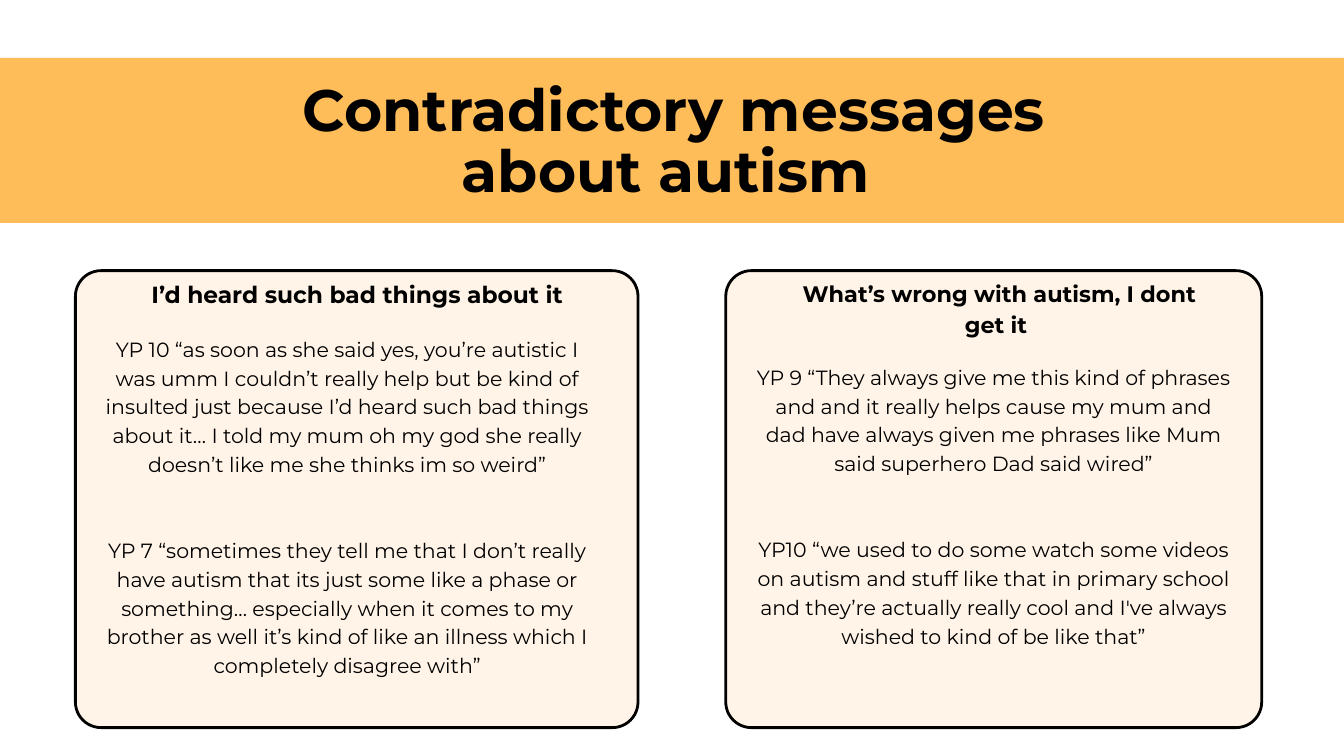
from pptx import Presentation
from pptx.dml.color import RGBColor
from pptx.enum.shapes import MSO_SHAPE
from pptx.enum.text import PP_ALIGN
from pptx.util import Pt

RECTANGLE = MSO_SHAPE.RECTANGLE
ROUNDED = MSO_SHAPE.ROUNDED_RECTANGLE
CENTER = PP_ALIGN.CENTER

ORANGE = RGBColor(0xFF, 0xBD, 0x59)
CREAM = RGBColor(0xFF, 0xF4, 0xE7)
BLACK = RGBColor(0, 0, 0)
FONT = "Montserrat"

SLIDE_W, SLIDE_H = 1440, 810
CARD_TOP, CARD_H, CORNER = 290, 489.6, 27.5
HEADING_TOP = 295.2
QUOTE_SIZE, QUOTE_LEADING = 22, 30.8
QUOTE_GAP = 2 * QUOTE_LEADING
QUOTES_BOTTOM = 754.5

# The space that ends the title and headings counts when a line is centred.
TITLE = "Contradictory messages about autism "

# Spans are (left, width).
CARDS = [
    {
        "card": (80.8, 602.8),
        "heading": "I’d heard such bad things about it ",
        "heading_span": (159.1, 447.1),
        "heading_size": 25,
        "heading_lines": 1,
        "quotes": [
            "YP 10 “as soon as she said yes, you’re autistic I was umm I couldn’t "
            "really help but be kind of insulted just because I’d heard such bad "
            "things about it… I told my mum oh my god she really doesn’t like me "
            "she thinks im so weird”",
            "YP 7 “sometimes they tell me that I don’t really have autism that its "
            "just some like a phase or something… especially when it comes to my "
            "brother as well it’s kind of like an illness which I completely "
            "disagree with”",
        ],
        "quotes_span": (105.1, 533.5),
        "quotes_top": 356.4,
    },
    {
        "card": (777.6, 574.2),
        "heading": "What’s wrong with autism, I dont get it ",
        "heading_span": (857.5, 426.2),
        "heading_size": 24,
        "heading_lines": 2,
        "quotes": [
            "YP 9 “They always give me this kind of phrases and and it really helps "
            "cause my mum and dad have always given me phrases like Mum said "
            "superhero Dad said wired”",
            "YP10 “we used to do some watch some videos on autism and stuff like "
            "that in primary school and they’re actually really cool and I've "
            "always wished to kind of be like that”",
        ],
        "quotes_span": (807.8, 513.4),
        "quotes_top": 386.6,
    },
]


def add_panel(slide, preset, left, top, width, height, fill, outline=None):
    panel = slide.shapes.add_shape(preset, Pt(left), Pt(top), Pt(width), Pt(height))
    panel.shadow.inherit = False
    panel.fill.solid()
    panel.fill.fore_color.rgb = fill
    if outline is None:
        panel.line.fill.background()
    else:
        panel.line.color.rgb = outline
        panel.line.width = Pt(3)
    return panel


def add_text(slide, paragraphs, left, top, width, height, *,
             size, leading, bold=False, gap=0):
    """Centred text; gap is the space between paragraphs."""
    box = slide.shapes.add_textbox(Pt(left), Pt(top), Pt(width), Pt(height))
    frame = box.text_frame
    frame.word_wrap = True
    frame.margin_left = frame.margin_right = 0
    frame.margin_top = frame.margin_bottom = 0
    for index, text in enumerate(paragraphs):
        paragraph = frame.add_paragraph() if index else frame.paragraphs[0]
        paragraph.alignment = CENTER
        paragraph.line_spacing = Pt(leading)
        paragraph.space_before = Pt(gap if index else 0)
        run = paragraph.add_run()
        run.text = text
        run.font.name = FONT
        run.font.size = Pt(size)
        run.font.bold = bold
        run.font.color.rgb = BLACK


def add_card(slide, content):
    left, width = content["card"]
    card = add_panel(slide, ROUNDED, left, CARD_TOP, width, CARD_H, CREAM, BLACK)
    card.adjustments[0] = CORNER / min(width, CARD_H)

    left, width = content["heading_span"]
    size = content["heading_size"]
    leading = size * 1.4
    add_text(slide, [content["heading"]], left, HEADING_TOP, width,
             leading * content["heading_lines"], size=size, leading=leading, bold=True)

    left, width = content["quotes_span"]
    top = content["quotes_top"]
    add_text(slide, content["quotes"], left, top, width, QUOTES_BOTTOM - top,
             size=QUOTE_SIZE, leading=QUOTE_LEADING, gap=QUOTE_GAP)


def main():
    deck = Presentation()
    deck.slide_width, deck.slide_height = Pt(SLIDE_W), Pt(SLIDE_H)
    slide = deck.slides.add_slide(deck.slide_layouts[6])

    add_panel(slide, RECTANGLE, 0, 61.9, SLIDE_W, 176.8, ORANGE)
    add_text(slide, [TITLE], 320.4, 87.8, 803.5, 133.2,
             size=62.5, leading=65.6, bold=True)
    for content in CARDS:
        add_card(slide, content)

    deck.save("out.pptx")


if __name__ == "__main__":
    main()
